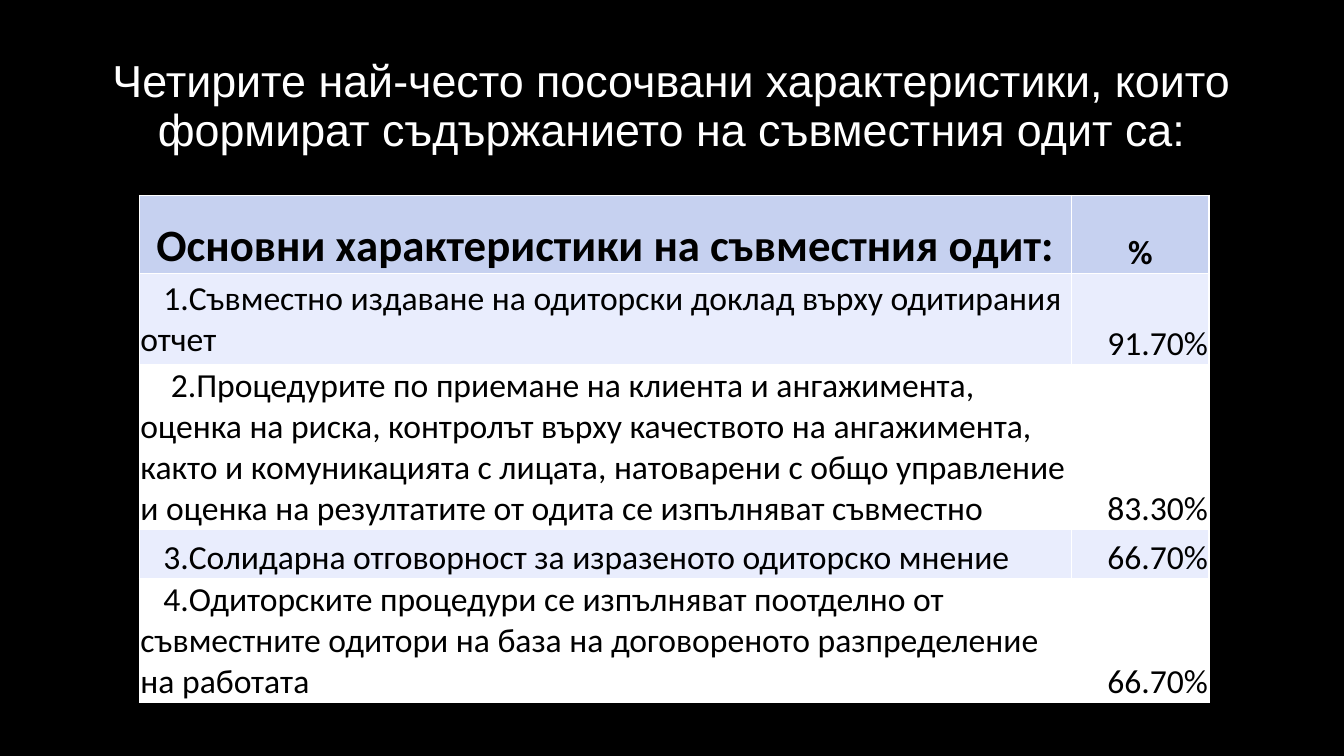
from lxml import etree
from pptx import Presentation
from pptx.dml.color import RGBColor
from pptx.enum.text import MSO_ANCHOR, MSO_AUTO_SIZE, PP_ALIGN
from pptx.oxml.ns import qn
from pptx.util import Pt

LEFT, CENTER, RIGHT = PP_ALIGN.LEFT, PP_ALIGN.CENTER, PP_ALIGN.RIGHT
MIDDLE, BOTTOM = MSO_ANCHOR.MIDDLE, MSO_ANCHOR.BOTTOM
TITLE_ONLY = 5
WHITE, BLACK = "FFFFFF", "000000"
HEADER_FILL, BAND_FILL = "C6D1F0", "E9EDFD"


def color(value):
    return RGBColor.from_string(value)


def write(frame, text, size=24, font="Calibri", fill=BLACK, bold=False,
          align=LEFT, indent=0, spacing=None):
    paragraph = frame.paragraphs[0]
    paragraph.alignment = align
    if spacing:
        paragraph.line_spacing = spacing
    if indent:
        properties = paragraph._p.get_or_add_pPr()
        properties.set("marL", "0")
        properties.set("indent", str(Pt(indent)))
    run = paragraph.add_run()
    run.text = text
    run.font.size = Pt(size)
    run.font.name = font
    run.font.bold = bold
    run.font.color.rgb = color(fill)


presentation = Presentation()
presentation.slide_width, presentation.slide_height = Pt(960), Pt(540)
slide = presentation.slides.add_slide(presentation.slide_layouts[TITLE_ONLY])
slide.background.fill.solid()
slide.background.fill.fore_color.rgb = color(BLACK)

# Title
title = slide.shapes.title
title.left, title.top, title.width, title.height = Pt(66), Pt(13), Pt(828), Pt(127.5)
title.text_frame.auto_size = MSO_AUTO_SIZE.NONE
title.text_frame.word_wrap = True
title.text_frame.vertical_anchor = MIDDLE
write(title.text_frame,
      "Четирите най-често посочвани характеристики, които формират "
      "съдържанието на съвместния одит са:",
      size=32, font="Arial", fill=WHITE, align=CENTER, spacing=0.9)

# Table content: characteristic, share, row height, first-line indent, anchor
rows = [
    ("Основни характеристики на съвместния одит:", "%", 55.6, 0, BOTTOM),
    ("1.Съвместно издаване на одиторски доклад върху одитирания отчет",
     "91.70%", 65.3, 16.3, MIDDLE),
    ("2.Процедурите по приемане на клиента и ангажимента, оценка на риска, "
     "контролът върху качеството на ангажимента, както и комуникацията с лицата, "
     "натоварени с общо управление и оценка на резултатите от одита се изпълняват "
     "съвместно", "83.30%", 106.6, 21.7, BOTTOM),
    ("3.Солидарна отговорност за изразеното одиторско мнение",
     "66.70%", 35, 16.3, BOTTOM),
    ("4.Одиторските процедури се изпълняват поотделно от съвместните одитори "
     "на база на договореното разпределение на работата",
     "66.70%", 83.5, 16.3, BOTTOM),
]
table = slide.shapes.add_table(len(rows), 2, Pt(99.6), Pt(139.6),
                               Pt(764), Pt(346)).table
table.columns[0].width, table.columns[1].width = Pt(666), Pt(98)

for row_index, (characteristic, share, height, indent, anchor) in enumerate(rows):
    table.rows[row_index].height = Pt(height)
    header = row_index == 0
    band = HEADER_FILL if header else BAND_FILL if row_index % 2 else WHITE
    for column_index, text in enumerate((characteristic, share)):
        first = column_index == 0
        cell = table.cell(row_index, column_index)
        cell.margin_left = cell.margin_right = cell.margin_top = Pt(0.75)
        cell.margin_bottom = 0
        cell.vertical_anchor = anchor if first else BOTTOM
        cell.fill.solid()
        cell.fill.fore_color.rgb = color(band)
        write(cell.text_frame, text, size=32 if header and first else 24, bold=header,
              align=CENTER if header else LEFT if first else RIGHT,
              indent=indent if first else 0)

        # White cell borders, placed ahead of the fill
        properties = cell._tc.get_or_add_tcPr()
        for position, side in enumerate(("a:lnL", "a:lnR", "a:lnT", "a:lnB")):
            border = etree.Element(qn(side), w=str(Pt(1)))
            solid = etree.SubElement(border, qn("a:solidFill"))
            etree.SubElement(solid, qn("a:srgbClr"), val=WHITE)
            properties.insert(position, border)

presentation.save("out.pptx")
